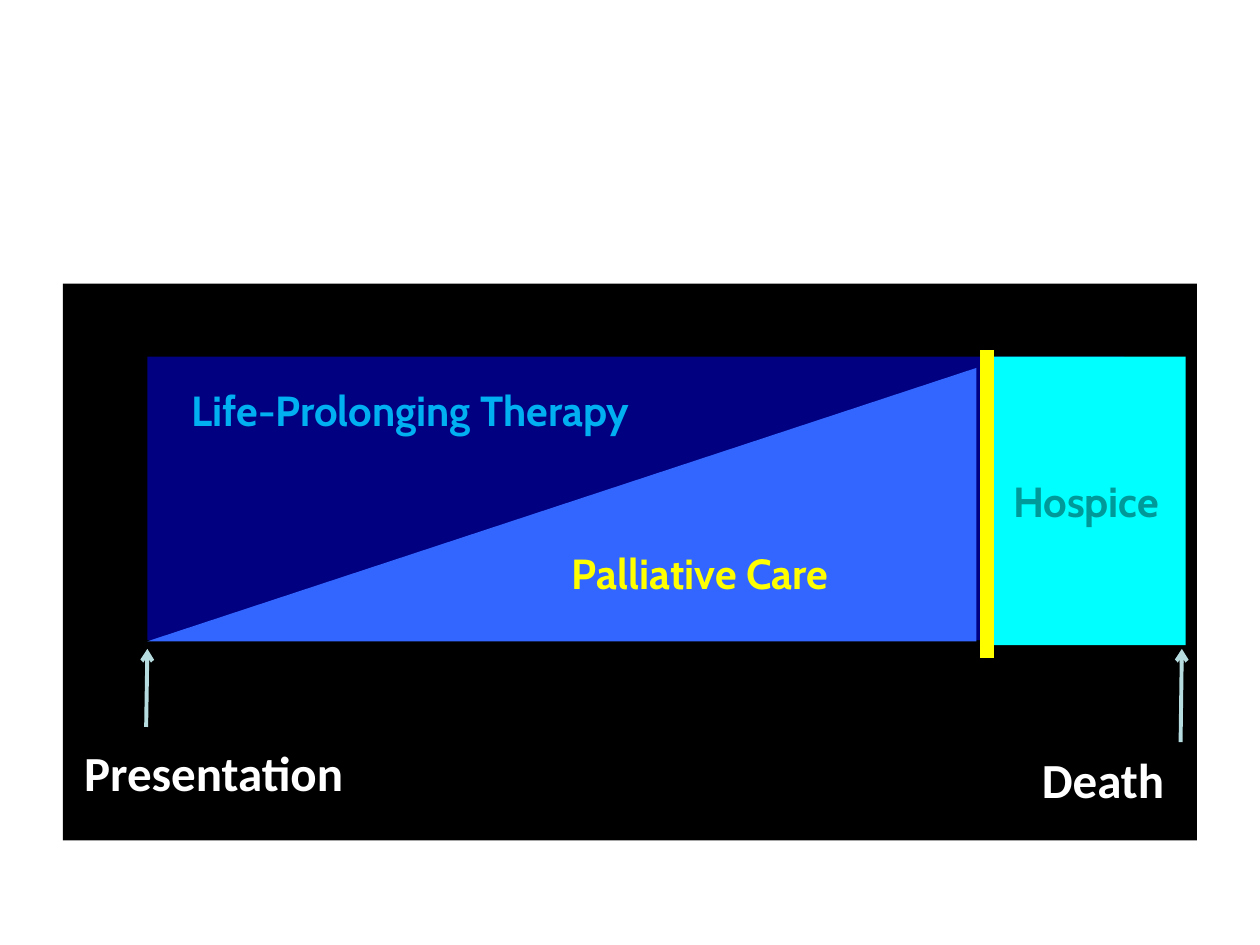
import pptx
import pptx.util
import pptx.dml.color
import pptx.enum.shapes
import pptx.enum.text
import pptx.oxml.ns
from lxml import etree

Inches, Pt = pptx.util.Inches, pptx.util.Pt
SHAPE = pptx.enum.shapes.MSO_SHAPE

COLORS = {
    "panel": "000000", "therapy": "000080", "hospice": "00FFFF",
    "palliative": "3366FF", "divider": "FFFF00", "arrow": "B6DCDF",
    "therapy text": "00B0F0", "hospice text": "009999",
    "palliative text": "FFFF00", "label": "FFFFFF",
}

# Position (left, top, width, height), preset, fill, text, text colour
PANEL = ((0.5, 2.25, 9, 4.42), SHAPE.RECTANGLE, "panel", None, None)
THERAPY = ((1.17, 2.83, 7.75, 2.25), SHAPE.RECTANGLE, "therapy", None, None)
HOSPICE = ((7.83, 2.83, 1.58, 2.29), SHAPE.RECTANGLE, "hospice",
           "Hospice", "hospice text")
PALLIATIVE = ((1.17, 2.92, 6.58, 2.17), SHAPE.RIGHT_TRIANGLE, "palliative",
              "Palliative Care", "palliative text")

# Position, text, font, size, colour
LABELS = [
    ((0.57, 5.84, 2.75, 0.57), "Presentation", "Calibri", 28, "label"),
    ((8.17, 5.9, 1.33, 0.57), "Death", "Calibri", 28, "label"),
    ((1.42, 3, 4.2, 0.91), "Life-Prolonging Therapy", "Cabin", 24, "therapy text"),
]

# Start and end of the arrows on the time line
ARROWS = [((9.37, 5.89), (9.38, 5.15)), ((1.16, 5.77), (1.17, 5.15))]
DIVIDER = ((7.83, 2.83), (7.83, 5.17))


def rgb(name):
    return pptx.dml.color.RGBColor.from_string(COLORS[name])


def write(tf, text, font, size, color):
    p = tf.paragraphs[0]
    p.text = text
    p.font.name, p.font.size, p.font.bold = font, Pt(size), True
    p.font.color.rgb = rgb(color)
    return p


def add_area(slide, box, preset, fill, text, color):
    sp = slide.shapes.add_shape(preset, *map(Inches, box))
    sp.shadow.inherit = False
    sp.fill.solid()
    sp.fill.fore_color.rgb = rgb(fill)
    sp.line.fill.background()
    if text:
        sp.text_frame.word_wrap = False
        p = write(sp.text_frame, text, "Cabin", 24, color)
        p.alignment = pptx.enum.text.PP_ALIGN.CENTER
    return sp


def add_label(slide, box, *text):
    tf = slide.shapes.add_textbox(*map(Inches, box)).text_frame
    tf.word_wrap = True
    write(tf, *text)


def add_line(slide, start, end, color, width):
    """Draw a line without shadow and return its a:ln element."""
    line = slide.shapes.add_connector(
        pptx.enum.shapes.MSO_CONNECTOR.STRAIGHT, *map(Inches, start + end))
    line.line.color.rgb = rgb(color)
    line.line.width = Pt(width)
    sp_pr = line._element.spPr
    etree.SubElement(sp_pr, pptx.oxml.ns.qn("a:effectLst"))
    return sp_pr.find(pptx.oxml.ns.qn("a:ln"))


def main():
    prs = pptx.Presentation()
    prs.slide_width, prs.slide_height = Inches(10), Inches(7.5)
    slide = prs.slides.add_slide(prs.slide_layouts[6])

    for area in (PANEL, THERAPY, HOSPICE):
        add_area(slide, *area)
    add_line(slide, *DIVIDER, "divider", 8).set("cap", "sq")
    triangle = add_area(slide, *PALLIATIVE)
    triangle._element.spPr.find(pptx.oxml.ns.qn("a:xfrm")).set("flipH", "1")

    for label in LABELS:
        add_label(slide, *label)
    for start, end in ARROWS:
        ln = add_line(slide, start, end, "arrow", 2.25)
        etree.SubElement(ln, pptx.oxml.ns.qn("a:tailEnd"), type="arrow")

    prs.save("out.pptx")


if __name__ == "__main__":
    main()
